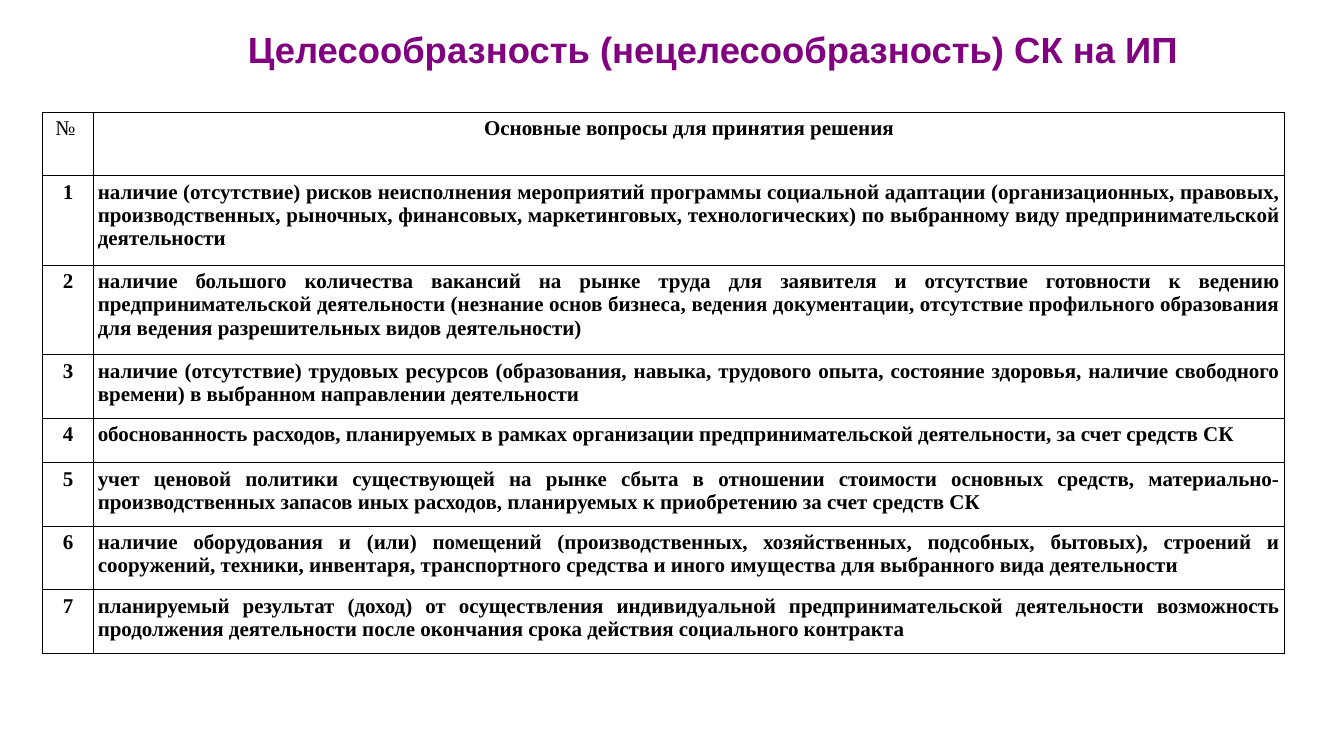
"""Slide with a numbered table of questions for a social contract decision."""
from lxml import etree
from pptx import Presentation
from pptx import util as u
from pptx.dml.color import RGBColor
from pptx.enum import text
from pptx.oxml import ns

TITLE = "Целесообразность (нецелесообразность) СК на ИП"
HEADER = ("№ ", "Основные вопросы для принятия решения")
QUESTIONS = [
    (3, "наличие (отсутствие) рисков неисполнения мероприятий программы социальной адаптации (организационных, правовых, производственных, рыночных, финансовых, маркетинговых, технологических) по выбранному виду предпринимательской деятельности"),
    (3, "наличие большого количества вакансий на рынке труда для заявителя и отсутствие готовности к ведению предпринимательской деятельности (незнание основ бизнеса, ведения документации, отсутствие профильного образования для ведения разрешительных видов деятельности)"),
    (2, "наличие (отсутствие) трудовых ресурсов (образования, навыка, трудового опыта, состояние здоровья, наличие свободного времени) в выбранном направлении деятельности"),
    (1, "обоснованность расходов, планируемых в рамках организации предпринимательской деятельности, за счет средств СК "),
    (2, "учет ценовой политики существующей на рынке сбыта в отношении стоимости основных средств, материально-производственных запасов иных расходов, планируемых к приобретению за счет средств СК"),
    (2, "наличие оборудования и (или) помещений (производственных, хозяйственных, подсобных, бытовых), строений и сооружений, техники, инвентаря, транспортного средства и иного имущества для выбранного вида деятельности"),
    (2, "планируемый результат (доход) от осуществления индивидуальной предпринимательской деятельности возможность продолжения деятельности после окончания срока действия социального контракта"),
]
COLORS = {"title": "800080", "ink": "000000"}
PAGE = (13.33, 7.5)
TITLE_AREA = (0.57, 0.19, 13.01, 0.59)
TABLE_CORNER = (0.42, 1.11)
COLUMNS = (0.51, 11.81)
HEIGHT_BY_LINES = {1: 0.44, 2: 0.63, 3: 0.89}
BORDER_POINTS = 0.57


def style(para, font_name, size, color, bold, align):
    para.alignment = align
    for span in para.runs:
        font = span.font
        font.name, font.size, font.bold = font_name, u.Pt(size), bold
        font.color.rgb = RGBColor.from_string(COLORS[color])


def add_borders(cell):
    props = cell._tc.get_or_add_tcPr()
    for index, side in enumerate(("lnL", "lnR", "lnT", "lnB")):
        line = etree.Element(ns.qn("a:" + side), w=str(int(u.Pt(BORDER_POINTS))))
        fill = etree.SubElement(line, ns.qn("a:solidFill"))
        etree.SubElement(fill, ns.qn("a:srgbClr"), val=COLORS["ink"])
        props.insert(index, line)


def add_title(page):
    box = page.shapes.add_textbox(*map(u.Inches, TITLE_AREA))
    frame = box.text_frame
    frame.word_wrap = True
    frame.vertical_anchor = text.MSO_ANCHOR.MIDDLE
    frame.margin_left = frame.margin_right = frame.margin_top = frame.margin_bottom = 0
    frame.text = TITLE
    style(frame.paragraphs[0], "Arial", 26, "title", True, text.PP_ALIGN.CENTER)


def add_questions(page):
    rows = [HEADER] + [(str(n), question) for n, (_, question) in enumerate(QUESTIONS, 1)]
    heights = [HEIGHT_BY_LINES[lines] for lines in [2] + [lines for lines, _ in QUESTIONS]]
    area = TABLE_CORNER + (sum(COLUMNS), sum(heights))
    table = page.shapes.add_table(len(rows), len(COLUMNS), *map(u.Inches, area)).table
    table.first_row = table.horz_banding = False
    for column, width in zip(table.columns, COLUMNS):
        column.width = u.Inches(width)
    for r, (row, height) in enumerate(zip(rows, heights)):
        table.rows[r].height = u.Inches(height)
        for c, words in enumerate(row):
            cell = table.cell(r, c)
            cell.margin_left = cell.margin_right = u.Inches(0.04)
            cell.margin_top = cell.margin_bottom = u.Inches(0.05)
            cell.text = words
            cell.fill.background()
            add_borders(cell)
            align = text.PP_ALIGN.JUSTIFY if r and c else text.PP_ALIGN.CENTER
            style(cell.text_frame.paragraphs[0], "Times New Roman", 15, "ink", bool(r or c), align)


def main():
    deck = Presentation()
    deck.slide_width, deck.slide_height = map(u.Inches, PAGE)
    page = deck.slides.add_slide(deck.slide_layouts[6])
    add_questions(page)
    add_title(page)
    deck.save("out.pptx")


if __name__ == "__main__":
    main()
